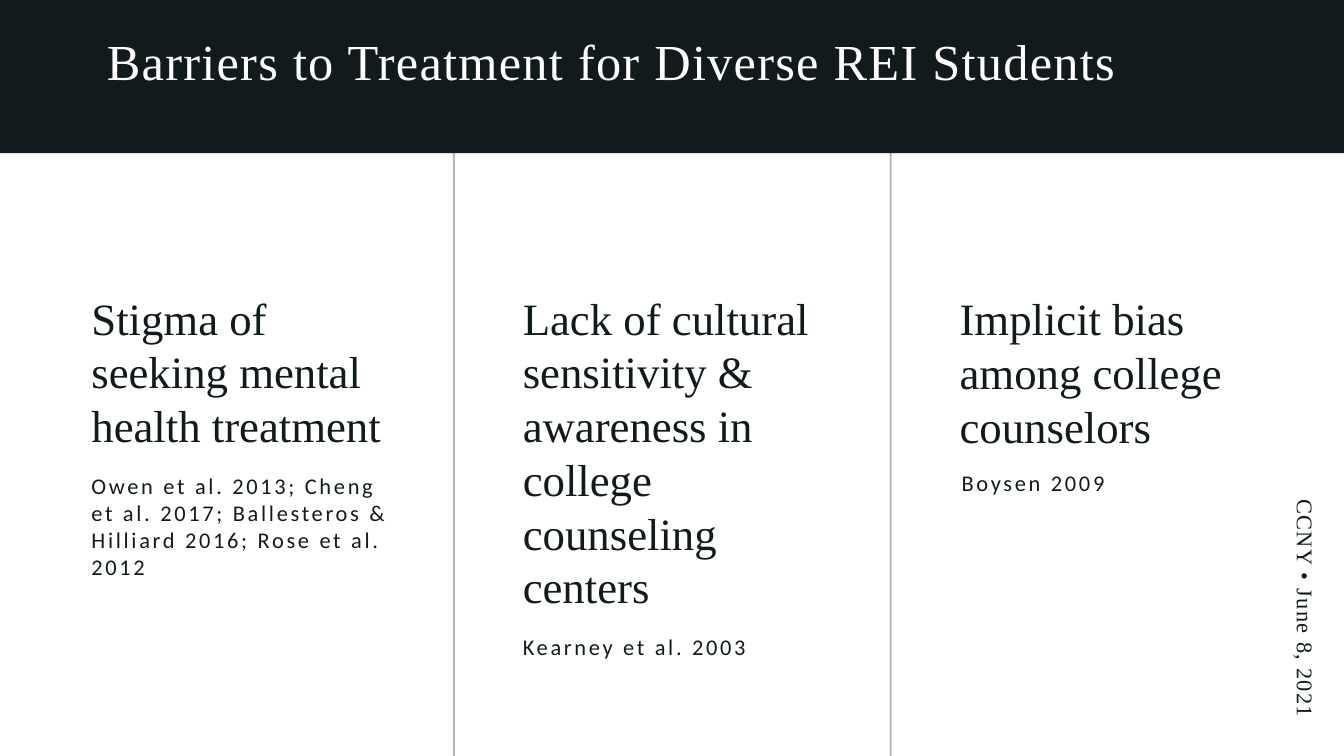
import pptx
import pptx.dml.color
import pptx.enum.shapes
import pptx.enum.text
import pptx.util
from lxml import etree
from dataclasses import dataclass

Inches = pptx.util.Inches
Pt = pptx.util.Pt
RGB = pptx.dml.color.RGBColor
Align = pptx.enum.text.PP_ALIGN


@dataclass(frozen=True)
class Theme:
    ink: RGB = RGB(0x11, 0x1B, 0x1E)
    paper: RGB = RGB(0xFF, 0xFF, 0xFF)
    serif: str = "Times New Roman"
    sans: str = "Calibri"
    title: float = 54
    heading: float = 48
    small: float = 24


theme = Theme()
presentation = pptx.Presentation()
presentation.slide_width = Inches(20)
presentation.slide_height = Inches(11.25)
slide = presentation.slides.add_slide(presentation.slide_layouts[6])
slide.background.fill.solid()
slide.background.fill.fore_color.rgb = theme.paper


def add_block(left, top, width, height):
    block = slide.shapes.add_shape(
        pptx.enum.shapes.MSO_SHAPE.RECTANGLE,
        Inches(left), Inches(top), Inches(width), Inches(height))
    block.shadow.inherit = False
    block.fill.solid()
    block.fill.fore_color.rgb = theme.ink
    block.line.fill.background()
    return block


def add_text(text, left, top, width, height, size, face, leading,
             color=theme.ink, tracking=0, align=Align.LEFT):
    box = slide.shapes.add_textbox(
        Inches(left), Inches(top), Inches(width), Inches(height))
    frame = box.text_frame
    frame.word_wrap = True
    frame.margin_left = frame.margin_right = 0
    frame.margin_top = frame.margin_bottom = 0
    paragraph = frame.paragraphs[0]
    run = paragraph.add_run()
    run.text = text
    if tracking:
        run._r.get_or_add_rPr().set("spc", str(round(tracking * 100)))
    paragraph.alignment = align
    paragraph.line_spacing = Pt(leading)
    paragraph.font.size = Pt(size)
    paragraph.font.name = face
    paragraph.font.color.rgb = color
    return box


for divider_left in (6.74, 13.24):
    divider = add_block(divider_left, 2.28, 0.03, 8.97)
    tint = divider.fill._xPr.find(".//" + pptx.oxml.ns.qn("a:srgbClr"))
    etree.SubElement(tint, pptx.oxml.ns.qn("a:alpha"), val="30000")

add_block(0, 0, 20, 2.28)
add_text("Barriers to Treatment for Diverse REI Students", 1.59, 0.88, 17.17, 0.57,
         theme.title, theme.serif, 33.6, color=theme.paper, tracking=1.4)

barriers = [
    ("Stigma of seeking mental health treatment", 1.36, 4.32, 2.42,
     "Owen et al. 2013; Cheng et al. 2017; Ballesteros & Hilliard 2016; Rose et al. 2012",
     1.36, 7.03, 3.47, 28.8),
    ("Lack of cultural sensitivity & awareness in college counseling centers",
     7.78, 4.32, 4.85, "Kearney et al. 2003", 7.78, 9.2, 0.56, 44.8),
    ("Implicit bias among college counselors", 14.28, 4.33, 2.42,
     "Boysen 2009", 14.31, 6.76, 0.56, 44.8),
]
for (barrier, left, top, height,
     citation, citation_left, citation_top, citation_height, leading) in barriers:
    add_text(barrier, left, top, 4.45, height, theme.heading, theme.serif, 57.6)
    add_text(citation, citation_left, citation_top, 4.45, citation_height,
             theme.small, theme.sans, leading, tracking=2.9)

event = add_text("CCNY • June 8, 2021", 16.83, 7.8, 5.29, 0.45,
                 theme.small, theme.serif, 33.6, tracking=1.4, align=Align.RIGHT)
event.rotation = 90

presentation.save("out.pptx")
